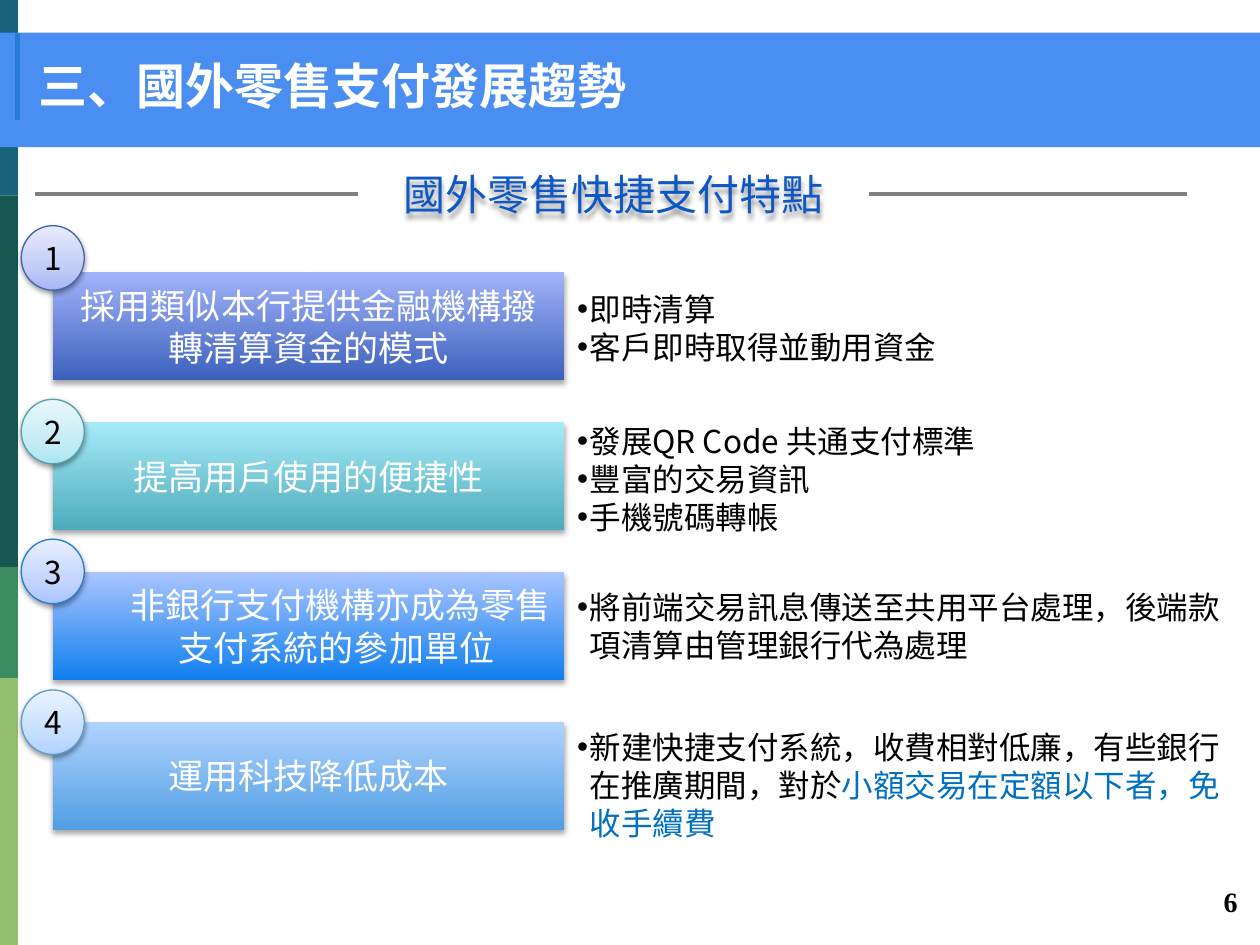
from dataclasses import dataclass
from typing import NamedTuple

from lxml.etree import SubElement
from pptx import Presentation
from pptx.dml.color import RGBColor
from pptx.enum.shapes import MSO_CONNECTOR, MSO_SHAPE
from pptx.enum.text import MSO_ANCHOR, MSO_AUTO_SIZE, PP_ALIGN
from pptx.oxml.ns import qn
from pptx.util import Cm, Pt


@dataclass(frozen=True)
class Theme:
    """Colours, fonts and type sizes of the slide."""
    font: str = "Noto Sans CJK SC"
    number_font: str = "Times New Roman"
    white: str = "FFFFFF"
    black: str = "000000"
    banner: str = "4A8EF2"
    accent: str = "247CD5"
    heading: str = "0E58C4"
    rule: str = "808080"
    highlight: str = "0070C0"
    ribbon: tuple = ("18637B", "165751", "3B8D61", "94BF6E")
    title_size: int = 28
    heading_size: int = 24
    card_size: int = 20
    body_size: int = 18
    page_size: int = 16


THEME = Theme()


class Box(NamedTuple):
    """A rectangle in centimetres."""
    left: float
    top: float
    width: float
    height: float

    def inner(self, left, top, width, height):
        """Return a box placed relative to this one."""
        return Box(self.left + left, self.top + top, width, height)

    def lengths(self):
        """Return the four lengths for python-pptx."""
        return [Cm(value) for value in self]


class Feature(NamedTuple):
    """One numbered row: its card, badge and bullet list."""
    card_lines: tuple
    card_indents: tuple
    card_colors: tuple
    badge_colors: tuple
    badge_outline: str
    badge_rise: float
    bullets: tuple
    list_offset: float
    list_width: float
    list_height: float


FEATURES = (
    Feature(("採用類似本行提供金融機構撥轉清算資金的模式",), (0,),
            ("3B60BB", "A2B3FA"), ("A8B7F4", "C2CCF6", "E7EBFD"), "4663AB", 0.94,
            (("即時清算",), ("客戶即時取得並動用資金",)), 0.23, 9.45, 1.8),
    Feature(("提高用戶使用的便捷性",), (0,),
            ("4DABBB", "A7EAF9"), ("ACE6F3", "C5ECF5", "E8F8FC"), "56A0AC", 0.46,
            (("發展QR Code 共通支付標準",), ("豐富的交易資訊",), ("手機號碼轉帳",)),
            -0.13, 14.2, 2.57),
    Feature(("非銀行支付機構亦成為零售", "支付系統的參加單位"), (1.28, 1.12),
            ("0F7FEF", "AAC5FF"), ("AAC5FF", "C3D5FF", "E8EFFF"), "247CD5", 0.66,
            (("將前端交易訊息傳送至共用平台處理，後端款項清算由管理銀行代為處理",),),
            0.2, 13.61, 1.8),
    Feature(("運用科技降低成本",), (0,),
            ("519EE2", "B0D3FF"), ("B0D3FF", "C7DFFF", "E9F3FF"), "5D9ACF", 0.64,
            (("新建快捷支付系統，收費相對低廉，有些銀行在推廣期間，對於",
              "小額交易在定額以下者，免收手續費"),), 0, 13.84, 2.57),
)


def place(shape, box):
    """Move and size a shape to a box."""
    shape.left, shape.top, shape.width, shape.height = box.lengths()


def style_paragraph(paragraph, size, color, alignment=PP_ALIGN.LEFT, bold=False,
                    font=THEME.font, margin=0, indent=0):
    """Set the font, alignment and indents of a paragraph."""
    paragraph.alignment = alignment
    paragraph.space_before = Pt(0)
    paragraph.font.name = font
    paragraph.font.size = Pt(size)
    paragraph.font.bold = bold
    paragraph.font.color.rgb = RGBColor.from_string(color)
    properties = paragraph._p.get_or_add_pPr()
    properties.set("marL", str(Cm(margin)))
    properties.set("indent", str(Cm(indent)))
    SubElement(properties.find(qn("a:defRPr")), qn("a:ea"), typeface=font)


def add_paragraphs(frame, count):
    """Return the given number of paragraphs in an empty frame."""
    return [frame.paragraphs[0]] + [frame.add_paragraph() for _ in range(count - 1)]


def add_panel(slide, box, color=None, kind=MSO_SHAPE.RECTANGLE):
    """Add a borderless shape without theme effects."""
    shape = slide.shapes.add_shape(kind, *box.lengths())
    shape.element.remove(shape.element.find(qn("p:style")))
    shape.shadow.inherit = False
    shape.line.fill.background()
    if color:
        shape.fill.solid()
        shape.fill.fore_color.rgb = RGBColor.from_string(color)
    return shape


def set_gradient(shape, stops):
    """Fill a shape from bottom to top with position and colour pairs."""
    shape.fill.gradient()
    shape.fill.gradient_angle = 90
    stop_list = shape.element.spPr.find(qn("a:gradFill")).find(qn("a:gsLst"))
    for stop in list(stop_list):
        stop_list.remove(stop)
    for position, color in stops:
        stop = SubElement(stop_list, qn("a:gs"), pos=str(position * 1000))
        SubElement(stop, qn("a:srgbClr"), val=color)


def set_shadow(shape, opacity, distance):
    """Give a shape a soft shadow below it."""
    shape.shadow.inherit = False
    effects = shape.element.spPr.find(qn("a:effectLst"))
    shadow = SubElement(effects, qn("a:outerShdw"), blurRad=str(Pt(3.1)),
                        dist=str(Pt(distance)), dir="5400000", rotWithShape="0")
    color = SubElement(shadow, qn("a:srgbClr"), val=THEME.black)
    SubElement(color, qn("a:alpha"), val=str(opacity * 1000))


def add_rule(slide, start, end, color, width):
    """Add a straight line between two points."""
    points = [Cm(value) for value in (*start, *end)]
    connector = slide.shapes.add_connector(MSO_CONNECTOR.STRAIGHT, *points)
    connector.line.color.rgb = RGBColor.from_string(color)
    connector.line.width = Pt(width)
    SubElement(connector.element.spPr, qn("a:effectLst"))


def build_ribbon(slide, box):
    """Stack the coloured segments along the left edge."""
    edges = (0, 3.94, 11.43, 13.67, box.height)
    for color, top, bottom in zip(THEME.ribbon, edges, edges[1:]):
        add_panel(slide, box.inner(0, top, box.width, bottom - top), color)


def build_banner(slide, box):
    """Draw the banner and put the title on it."""
    add_panel(slide, box, THEME.banner)
    add_rule(slide, (0.36, box.top), (0.36, box.top + 1.75), THEME.accent, 3)
    title = slide.shapes.title
    title.element.getparent().append(title.element)
    place(title, box.inner(0.53, 0.03, 23.47, 2.18))
    frame = title.text_frame
    frame.text = "三、國外零售支付發展趨勢"
    frame.auto_size = MSO_AUTO_SIZE.NONE
    frame.vertical_anchor = MSO_ANCHOR.MIDDLE
    frame.margin_top = frame.margin_bottom = Cm(0.25)
    frame.paragraphs[0].line_spacing = 0.9
    style_paragraph(frame.paragraphs[0], THEME.title_size, THEME.white, bold=True,
                    margin=1.98, indent=-1.98)


def build_heading(slide, box):
    """Place the section heading between two rules."""
    text_box = box.inner(6.5, 0, 10.31, box.height)
    middle = box.top + 0.61
    add_rule(slide, (box.left, middle), (text_box.left, middle), THEME.rule, 2.25)
    add_rule(slide, (text_box.left + text_box.width, middle),
             (box.left + box.width, middle), THEME.rule, 2.25)
    heading = slide.shapes.add_textbox(*text_box.lengths())
    set_shadow(heading, 40, 3)
    heading.text_frame.word_wrap = True
    paragraph = heading.text_frame.paragraphs[0]
    paragraph.text = "國外零售快捷支付特點"
    paragraph.line_spacing = Pt(28)
    style_paragraph(paragraph, THEME.heading_size, THEME.heading, PP_ALIGN.CENTER)


def build_card(slide, box, feature):
    """Draw the gradient card of a feature."""
    card = add_panel(slide, box)
    set_gradient(card, zip((0, 100), feature.card_colors))
    set_shadow(card, 35, 1.8)
    frame = card.text_frame
    frame.word_wrap = True
    frame.vertical_anchor = MSO_ANCHOR.MIDDLE
    paragraphs = add_paragraphs(frame, len(feature.card_lines))
    for paragraph, line, indent in zip(paragraphs, feature.card_lines, feature.card_indents):
        paragraph.text = line
        style_paragraph(paragraph, THEME.card_size, THEME.white, PP_ALIGN.CENTER, indent=indent)


def build_badge(slide, box, number, feature):
    """Draw the numbered circle of a feature."""
    badge = add_panel(slide, box, kind=MSO_SHAPE.OVAL)
    set_gradient(badge, zip((0, 35, 100), feature.badge_colors))
    badge.line.color.rgb = RGBColor.from_string(feature.badge_outline)
    badge.line.width = Pt(0.75)
    set_shadow(badge, 38, 1.6)
    badge.text_frame.vertical_anchor = MSO_ANCHOR.MIDDLE
    paragraph = badge.text_frame.paragraphs[0]
    paragraph.text = str(number)
    style_paragraph(paragraph, THEME.body_size, THEME.black, PP_ALIGN.CENTER)


def build_list(placeholder, box, feature):
    """Fill a body placeholder with the bullets of a feature."""
    place(placeholder, box)
    frame = placeholder.text_frame
    frame.auto_size = MSO_AUTO_SIZE.NONE
    frame.vertical_anchor = MSO_ANCHOR.TOP
    for paragraph, texts in zip(add_paragraphs(frame, len(feature.bullets)), feature.bullets):
        SubElement(paragraph._p.get_or_add_pPr(), qn("a:buChar"), char="•")
        style_paragraph(paragraph, THEME.body_size, THEME.black, margin=0.25, indent=-0.25)
        for text in texts:
            paragraph.add_run().text = text
        for run in paragraph.runs[1:]:
            run.font.color.rgb = RGBColor.from_string(THEME.highlight)


def build_features(slide, box):
    """Lay out the feature rows at equal steps."""
    for index, feature in enumerate(FEATURES):
        row = box.inner(0, index * 3.02, 10.31, 2.18)
        build_card(slide, row, feature)
        build_badge(slide, row.inner(-0.64, -feature.badge_rise, 1.27, 1.3), index + 1, feature)
        list_box = row.inner(row.width, feature.list_offset,
                             feature.list_width, feature.list_height)
        build_list(slide.placeholders[index + 1], list_box, feature)


def build_page_number(slide, box):
    """Write the page number."""
    paragraph = slide.shapes.add_textbox(*box.lengths()).text_frame.paragraphs[0]
    paragraph.text = "6"
    style_paragraph(paragraph, THEME.page_size, THEME.black, PP_ALIGN.RIGHT, True,
                    THEME.number_font)


def main():
    """Build and save the presentation."""
    presentation = Presentation()
    presentation.slide_width, presentation.slide_height = Cm(25.4), Cm(19.05)
    slide = presentation.slides.add_slide(presentation.slide_layouts.get_by_name("Comparison"))
    build_ribbon(slide, Box(0, 0, 0.36, 19.05))
    build_banner(slide, Box(0, 0.66, 25.4, 2.31))
    build_heading(slide, Box(0.71, 3.3, 23.22, 1.24))
    build_features(slide, Box(1.07, 5.49, 24.33, 11.24))
    build_page_number(slide, Box(21.82, 17.7, 3.38, 1.35))
    presentation.save("out.pptx")


if __name__ == "__main__":
    main()
